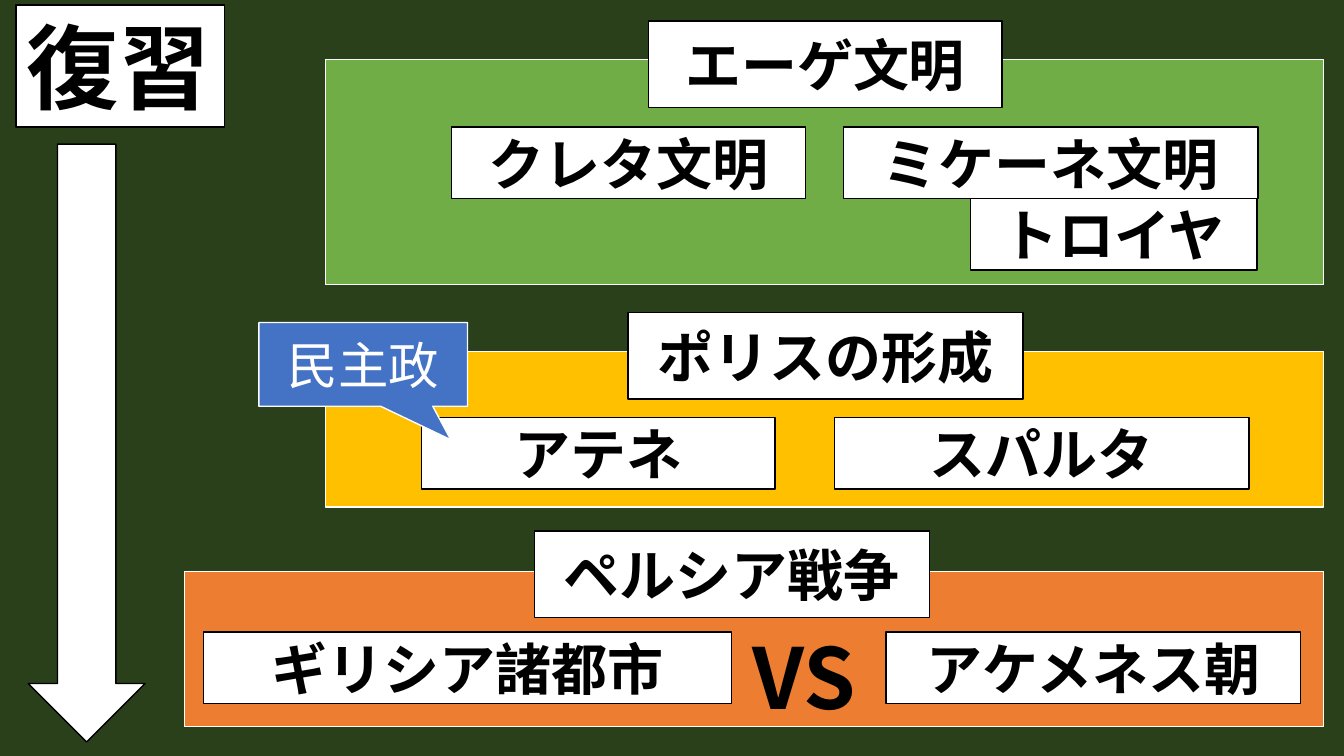
"""Build the review slide on ancient Greek history."""
from dataclasses import dataclass

from lxml import etree
from pptx import Presentation
from pptx.dml.color import RGBColor
from pptx.enum import shapes, text
from pptx.oxml import ns
from pptx.util import Pt


@dataclass(frozen=True)
class Theme:
    """Colours, type sizes and shared heights of the slide."""
    font: str = "Noto Sans CJK JP"
    board: str = "29401A"
    paper: str = "FFFFFF"
    ink: str = "000000"
    green: str = "70AD47"
    yellow: str = "FFC000"
    orange: str = "ED7D31"
    blue: str = "4472C4"
    title_size: int = 66
    versus_size: int = 60
    label_size: int = 40
    callout_size: int = 36
    heading_height: float = 61.9
    label_height: float = 51.1


THEME = Theme()
RECTANGLE = shapes.MSO_SHAPE.RECTANGLE

ERAS = [
    (THEME.green, (232.6, 42.5, 712.8, 160.6),
     ("エーゲ文明", 463, 15.1, 252.7),
     [("クレタ文明", 322.6, 90.7, 252.7),
      ("ミケーネ文明", 602.6, 90.7, 295.9),
      ("トロイヤ", 693.4, 141.8, 204.5)]),
    (THEME.yellow, (232.6, 251.3, 712.8, 110.9),
     ("ポリスの形成", 448.6, 223.2, 282.2),
     [("アテネ", 301, 298.1, 252.7),
      ("スパルタ", 596.2, 298.1, 295.9)]),
    (THEME.orange, (131.8, 408.2, 813.6, 110.9),
     ("ペルシア戦争", 381.6, 379.4, 282.2),
     [("ギリシア諸都市", 145.4, 451.4, 377.3),
      ("アケメネス朝", 632.9, 451.4, 295.9)]),
]


def paint(box, fill, line):
    """Give a box a solid fill and a thin outline."""
    box.fill.solid()
    box.fill.fore_color.rgb = RGBColor.from_string(fill)
    box.line.color.rgb = RGBColor.from_string(line)
    box.line.width = Pt(1)


def write(box, words, size, color=THEME.ink, bold=True, align=text.PP_ALIGN.CENTER):
    """Write one line of text, vertically centred in a box."""
    frame = box.text_frame
    frame.word_wrap = True
    frame.auto_size = text.MSO_AUTO_SIZE.NONE
    frame.vertical_anchor = text.MSO_ANCHOR.MIDDLE
    para = frame.paragraphs[0]
    para.alignment = align
    span = para.add_run()
    span.text = words
    span.font.size = Pt(size)
    span.font.bold = bold
    span.font.color.rgb = RGBColor.from_string(color)
    span.font.name = THEME.font
    east_asian = etree.SubElement(span.font._element, ns.qn("a:ea"))
    east_asian.set("typeface", THEME.font)


def add_box(page, kind, place, fill, line):
    """Add a painted preset shape without a shadow."""
    box = page.shapes.add_shape(kind, *map(Pt, place))
    box.shadow.inherit = False
    paint(box, fill, line)
    return box


def add_label(page, words, left, top, width, height):
    """Add a white label with bold text."""
    box = add_box(page, RECTANGLE, (left, top, width, height), THEME.paper, THEME.ink)
    write(box, words, THEME.label_size)


def add_era(page, color, place, heading, labels):
    """Add a coloured panel with its heading and labels."""
    add_box(page, RECTANGLE, place, color, THEME.paper)
    add_label(page, *heading, THEME.heading_height)
    for label in labels:
        add_label(page, *label, THEME.label_height)


def add_title(page, words):
    """Move and format the title placeholder."""
    title = page.shapes.title
    title.left, title.top, title.width, title.height = map(Pt, (11.5, 3.6, 149, 87.1))
    paint(title, THEME.paper, THEME.ink)
    write(title, words, THEME.title_size, align=text.PP_ALIGN.LEFT)


def add_versus(page):
    """Add the large VS between the two sides of the war."""
    box = page.shapes.add_textbox(*map(Pt, (530.6, 442.8, 131, 79.9)))
    write(box, "VS", THEME.versus_size, align=text.PP_ALIGN.LEFT)


def add_callout(page, words):
    """Add the blue callout that points at Athens."""
    box = add_box(page, shapes.MSO_SHAPE.RECTANGULAR_CALLOUT,
                  (185, 230.4, 149, 59.8), THEME.blue, THEME.paper)
    box.adjustments[0] = 0.42
    box.adjustments[1] = 0.9
    write(box, words, THEME.callout_size, THEME.paper, bold=False)


def main():
    """Build and save the deck."""
    deck = Presentation()
    deck.slide_width, deck.slide_height = Pt(960), Pt(540)
    page = deck.slides.add_slide(deck.slide_layouts.get_by_name("Title Only"))
    page.background.fill.solid()
    page.background.fill.fore_color.rgb = RGBColor.from_string(THEME.board)
    add_title(page, "復習")
    for era in ERAS:
        add_era(page, *era)
    add_versus(page)
    add_box(page, shapes.MSO_SHAPE.DOWN_ARROW, (20.2, 103, 83.5, 427),
            THEME.paper, THEME.ink)
    add_callout(page, "民主政")
    deck.save("out.pptx")


if __name__ == "__main__":
    main()
